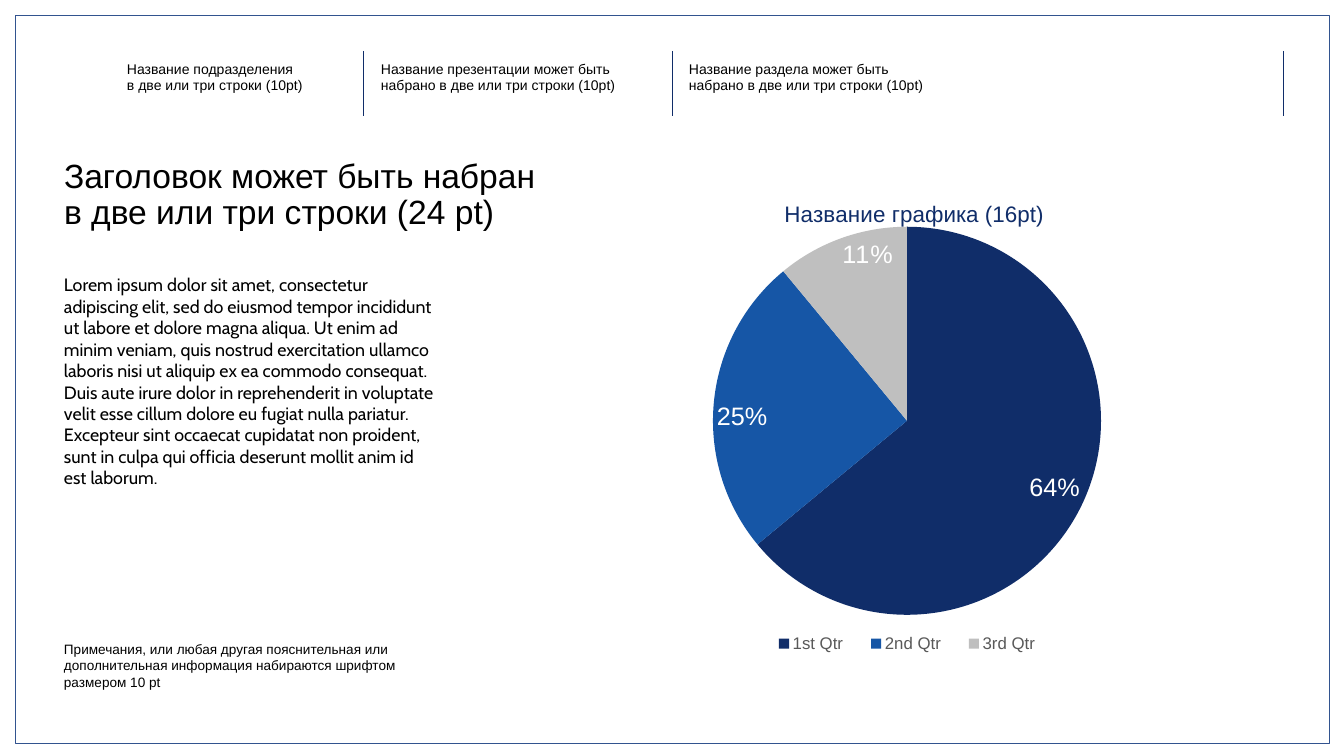
"""Build a slide with a header strip, a title, body text and a pie chart."""
from lxml import etree
from pptx import Presentation
from pptx import util as u
from pptx.chart.data import CategoryChartData
from pptx.dml.color import RGBColor
from pptx.enum import chart as c, shapes, text
from pptx.oxml import parse_xml
from pptx.oxml.ns import nsdecls, qn

SCALE = 18143
NAVY, BLACK, WHITE = "102D69", "000000", "FFFFFF"
FRAME = (15, 15, 1314, 728)
DIVIDERS, DIVIDER_TOP, DIVIDER_BOTTOM = (363, 672, 1283), 51, 116
HEADERS = [
    (122, "Название подразделения\vв две или три строки (10pt)"),
    (376, "Название презентации может быть набрано в две или три строки (10pt)"),
    (684, "Название раздела может быть набрано в две или три строки (10pt)"),
]
TITLE = "Заголовок может быть набран\vв две или три строки (24 pt)"
BODY = (
    "Lorem ipsum dolor sit amet, consectetur adipiscing elit, sed do eiusmod "
    "tempor incididunt ut labore et dolore magna aliqua. Ut enim ad minim veniam, "
    "quis nostrud exercitation ullamco laboris nisi ut aliquip ex ea commodo "
    "consequat. Duis aute irure dolor in reprehenderit in voluptate velit esse "
    "cillum dolore eu fugiat nulla pariatur. Excepteur sint occaecat cupidatat non "
    "proident, sunt in culpa qui officia deserunt mollit anim id est laborum."
)
NOTE = ("Примечания, или любая другая пояснительная или дополнительная информация "
        "набираются шрифтом размером 10 pt")
CHART_TITLE = "Название графика (16pt)"
CHART_BOX = (709, 191, 396, 469)
TITLE_PLACE = {"x": 0.18, "y": 0.01}
PLOT_PLACE = {"x": 0.01, "y": 0.07, "w": 0.98, "h": 0.84}
LEGEND_PLACE = {"x": 0.12, "y": 0.94, "w": 0.76, "h": 0.05}
SECTORS = [("1st Qtr", 64, NAVY), ("2nd Qtr", 25, "1656A6"), ("3rd Qtr", 11, "BFBFBF")]


def px(*values):
    return [value * SCALE for value in values]


def color(value):
    return RGBColor.from_string(value)


def style(font, size, value, name="Arial"):
    font.size, font.name, font.bold = u.Pt(size), name, False
    font.color.rgb = color(value)


def write(shape, content, size, name="Arial", spacing=1.0):
    frame = shape.text_frame
    frame.text = content
    frame.word_wrap = True
    frame.auto_size = text.MSO_AUTO_SIZE.NONE
    frame.vertical_anchor = text.MSO_ANCHOR.TOP
    frame.margin_left = frame.margin_right = u.Inches(0.1)
    frame.margin_top = frame.margin_bottom = u.Inches(0.1)
    paragraph = frame.paragraphs[0]
    paragraph.alignment = text.PP_ALIGN.LEFT
    paragraph.line_spacing = spacing
    paragraph.space_before = u.Pt(0)
    for run in paragraph.runs:
        style(run.font, size, BLACK, name)


def add_text(slide, box, content, size, name="Arial"):
    write(slide.shapes.add_textbox(*px(*box)), content, size, name)


def add_frame(slide):
    frame = slide.shapes.add_shape(shapes.MSO_SHAPE.RECTANGLE, *px(*FRAME))
    frame.shadow.inherit = False
    frame.fill.solid()
    frame.fill.fore_color.rgb = color(WHITE)
    frame.line.color.rgb = color("32538F")
    frame.line.width = u.Pt(0.25)
    slide.shapes._spTree.insert(2, frame._element)


def add_divider(slide, x):
    divider = slide.shapes.add_connector(
        shapes.MSO_CONNECTOR.STRAIGHT, *px(x, DIVIDER_TOP, x, DIVIDER_BOTTOM))
    divider.line.color.rgb = color(NAVY)
    divider.line.width = u.Pt(0.75)
    etree.SubElement(divider._element.spPr, qn("a:effectLst"))


def place(element, position, target=""):
    for layout in element.findall(qn("c:layout")):
        element.remove(layout)
    sizes = "".join(f'<c:{key} val="{value}"/>' for key, value in position.items())
    layout = parse_xml(
        f'<c:layout {nsdecls("c")}><c:manualLayout>{target}<c:xMode val="edge"/>'
        f'<c:yMode val="edge"/>{sizes}</c:manualLayout></c:layout>')
    overlay = element.find(qn("c:overlay"))
    if overlay is None:
        element.insert(0, layout)
    else:
        overlay.set("val", "1")
        overlay.addprevious(layout)


def add_pie(slide):
    data = CategoryChartData()
    data.categories = [name for name, _, _ in SECTORS]
    data.add_series("Series 1", [value for _, value, _ in SECTORS])
    chart = slide.shapes.add_chart(c.XL_CHART_TYPE.PIE, *px(*CHART_BOX), data).chart
    style(chart.font, 10, BLACK)
    chart.has_title = True
    chart.chart_title.text_frame.text = CHART_TITLE
    style(chart.chart_title.text_frame.paragraphs[0].runs[0].font, 32, NAVY)
    chart.has_legend = True
    chart.legend.position = c.XL_LEGEND_POSITION.BOTTOM
    chart.legend.include_in_layout = True
    style(chart.legend.font, 24, "595959")
    place(chart.chart_title._element, TITLE_PLACE)
    place(chart.legend._element, LEGEND_PLACE)
    place(chart._chartSpace.chart.plotArea, PLOT_PLACE, '<c:layoutTarget val="inner"/>')
    plot = chart.plots[0]
    plot.vary_by_categories = True
    for index, (_, _, value) in enumerate(SECTORS):
        fill = plot.series[0].points[index].format.fill
        fill.solid()
        fill.fore_color.rgb = color(value)
    plot.has_data_labels = True
    labels = plot.data_labels
    labels.show_percentage, labels.show_value = True, False
    labels.number_format, labels.number_format_is_linked = "0%", False
    labels.position = c.XL_LABEL_POSITION.INSIDE_END
    style(labels.font, 36, WHITE)


def main():
    presentation = Presentation()
    presentation.slide_width, presentation.slide_height = px(1344, 756)
    slide = presentation.slides.add_slide(presentation.slide_layouts[5])
    add_frame(slide)
    for x in DIVIDERS:
        add_divider(slide, x)
    for x, content in HEADERS:
        add_text(slide, (x, 55, 248, 60), content, 20)
    title = slide.shapes.title
    title.left, title.top, title.width, title.height = px(59, 154, 1107, 87)
    write(title, TITLE, 48, spacing=0.9)
    add_text(slide, (59, 269, 384, 255), BODY, 25.5, "Cabin")
    add_text(slide, (59, 636, 360, 60), NOTE, 19.4)
    add_pie(slide)
    presentation.save("out.pptx")


if __name__ == "__main__":
    main()
